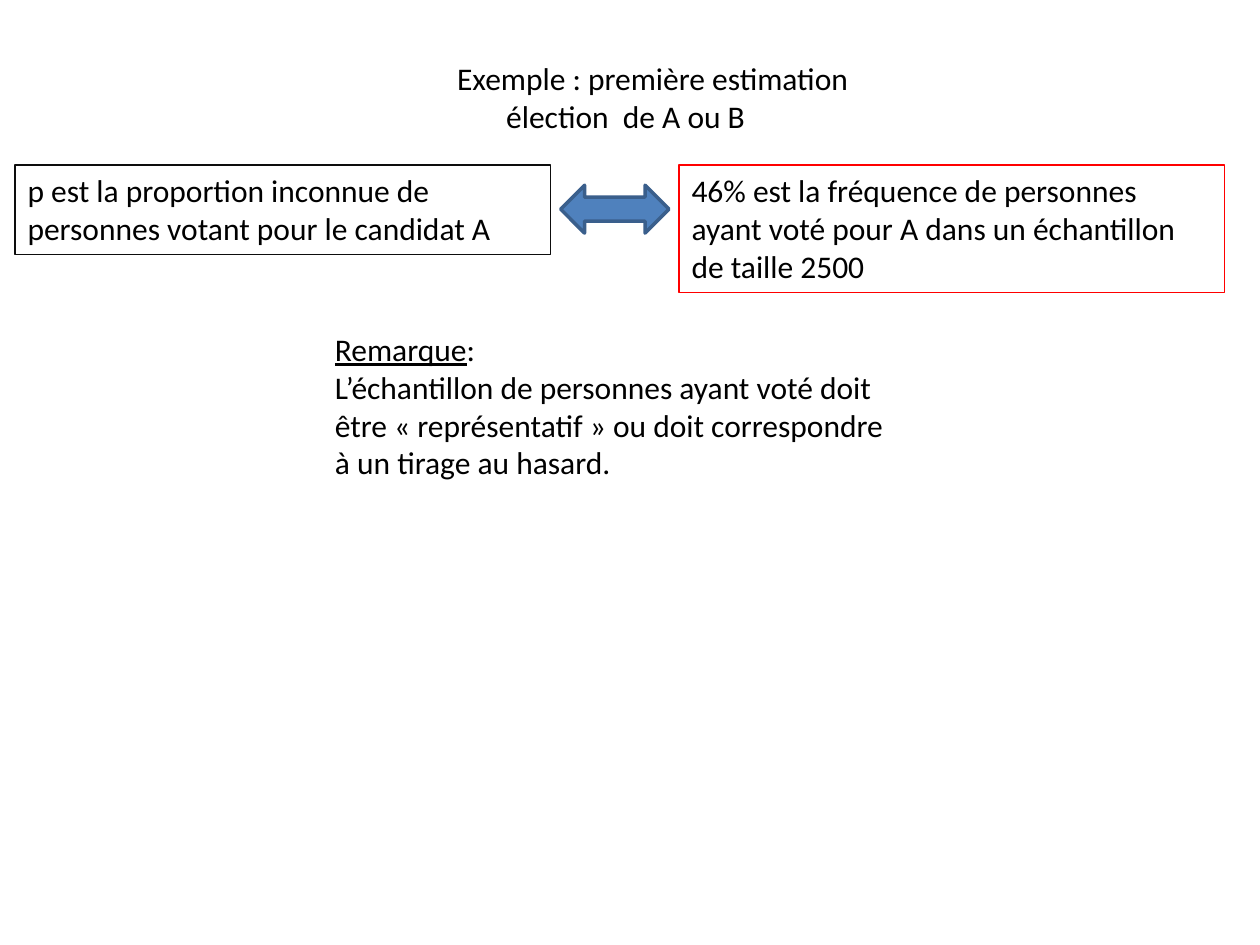
from pptx import Presentation
from pptx.dml.color import RGBColor
from pptx.enum.shapes import MSO_SHAPE as SHAPE
from pptx.util import Inches, Pt

BLACK = RGBColor(0x00, 0x00, 0x00)
DARK = RGBColor(0x0D, 0x0D, 0x0D)
RED = RGBColor(0xFF, 0x00, 0x00)
BLUE = RGBColor(0x4F, 0x81, 0xBD)
NAVY = RGBColor(0x3A, 0x5F, 0x8C)

TITLE = ["Exemple : première estimation", "élection  de A ou B"]
TITLE_INDENTS = [0.62, 1.01]
FRAMES = [
    ("p est la proportion inconnue de personnes votant pour le candidat A",
     (0.12, 1.31, 4.25, 0.71), DARK),
    ("46% est la fréquence de personnes ayant voté pour A dans un échantillon de taille 2500",
     (5.39, 1.31, 4.33, 1.01), RED),
]
REMARK_HEAD = "Remarque"
REMARK = ":\nL’échantillon de personnes ayant voté doit être «\u00a0représentatif\u00a0» ou doit correspondre à un tirage au hasard."


def add_text(s, text, box, outline=None):
    sp = s.shapes.add_textbox(*map(Inches, box))
    tf = sp.text_frame
    tf.word_wrap = True
    tf.text = text
    for p in tf.paragraphs:
        for r in p.runs:
            r.font.name = "Calibri"
            r.font.size = Pt(18)
            r.font.color.rgb = BLACK
    if outline is not None:
        sp.line.color.rgb = outline
        sp.line.width = Pt(0.75)
    return tf


def add_arrow(s, box):
    sp = s.shapes.add_shape(SHAPE.LEFT_RIGHT_ARROW, *map(Inches, box))
    sp.shadow.inherit = False
    sp.fill.solid()
    sp.fill.fore_color.rgb = BLUE
    sp.line.color.rgb = NAVY
    sp.line.width = Pt(2)


def main():
    prs = Presentation()
    prs.slide_width, prs.slide_height = Inches(10), Inches(7.5)
    s = prs.slides.add_slide(prs.slide_layouts[6])

    title = add_text(s, "\n".join(TITLE), (2.91, 0.42, 4.96, 0.71))
    for p, indent in zip(title.paragraphs, TITLE_INDENTS):
        p._p.get_or_add_pPr().set("marL", str(Inches(indent)))

    add_arrow(s, (4.45, 1.47, 0.86, 0.38))
    for text, box, outline in FRAMES:
        add_text(s, text, box, outline)

    remark = add_text(s, REMARK_HEAD + REMARK, (2.56, 2.57, 4.65, 1.92))
    p = remark.paragraphs[0]
    head = p.runs[0]
    colon = p.add_run()
    head.text, colon.text = REMARK_HEAD, ":"
    colon.font.name = "Calibri"
    colon.font.size = Pt(18)
    colon.font.color.rgb = BLACK
    head.font.underline = True

    prs.save("out.pptx")


if __name__ == "__main__":
    main()
